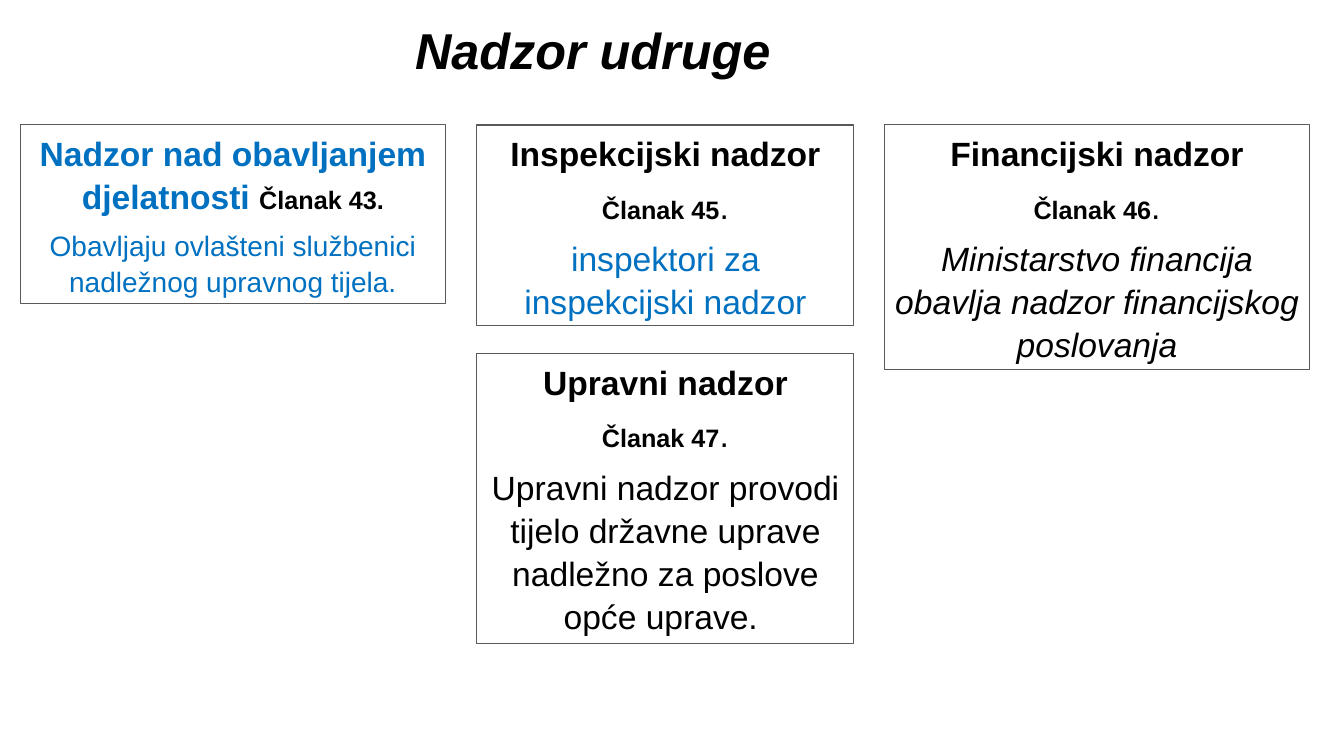
import pptx
import pptx.util
import pptx.dml.color
import pptx.enum.shapes
import pptx.enum.text

Inches = pptx.util.Inches
Pt = pptx.util.Pt
BLACK, BLUE, GREY = "000000", "0070C0", "595959"


def color(code):
    return pptx.dml.color.RGBColor.from_string(code)


def style(item, values):
    for key, value in values.items():
        setattr(item, key, value)


def run(text, size=24, tint=BLACK, **extra):
    return text, tint, {"name": "Arial", "size": Pt(size), "bold": False, "italic": False, **extra}


def write(frame, paras):
    style(frame, {
        "word_wrap": True,
        "auto_size": pptx.enum.text.MSO_AUTO_SIZE.NONE,
        "vertical_anchor": pptx.enum.text.MSO_ANCHOR.TOP,
        "margin_left": Inches(0.1),
        "margin_right": Inches(0.1),
        "margin_top": Inches(0.05),
        "margin_bottom": Inches(0.05),
    })
    for index, runs in enumerate(paras):
        para = frame.add_paragraph() if index else frame.paragraphs[0]
        style(para, {
            "alignment": pptx.enum.text.PP_ALIGN.CENTER,
            "line_spacing": 1.07,
            "space_before": Pt(0),
            "space_after": Pt(6.8),
        })
        for text, tint, values in runs:
            part = para.add_run()
            part.text = text
            style(part.font, values)
            part.font.color.rgb = color(tint)


def title(slide, box, text):
    head = slide.shapes.title
    style(head, dict(zip(("left", "top", "width", "height"), map(Inches, box))))
    write(head.text_frame, [[run(text, 36, bold=True, italic=True)]])


def card(slide, box, paras):
    shape = slide.shapes.add_shape(
        pptx.enum.shapes.MSO_SHAPE.RECTANGLE, *map(Inches, box))
    shape.shadow.inherit = False
    shape.fill.background()
    shape.line.color.rgb = color(GREY)
    shape.line.width = Pt(0.75)
    write(shape.text_frame, paras)


def topic(name, number, body):
    return [
        [run(name, bold=True)],
        [run(f"Članak {number}", 18, bold=True), run(".")],
        [body],
    ]


def main():
    deck = pptx.Presentation()
    style(deck, {"slide_width": Inches(13.33), "slide_height": Inches(7.5)})
    slide = deck.slides.add_slide(deck.slide_layouts[5])
    title(slide, (3.77, 0.1, 4.22, 0.72), "Nadzor udruge")

    top, side, mid = 1.24, 4.22, 3.74
    card(slide, (0.2, top, side, 1.77), [
        [run("Nadzor nad obavljanjem djelatnosti ", tint=BLUE, bold=True),
         run("Članak 43.", 18, bold=True)],
        [run("Obavljaju ovlašteni službenici nadležnog upravnog tijela.", 20, BLUE)],
    ])
    card(slide, (4.73, top, mid, 1.99), topic(
        "Inspekcijski nadzor", 45,
        run("inspektori za inspekcijski nadzor", tint=BLUE)))
    card(slide, (8.77, top, side, 2.43), topic(
        "Financijski nadzor", 46,
        run("Ministarstvo financija obavlja nadzor financijskog poslovanja", italic=True)))
    card(slide, (4.73, 3.51, mid, 2.87), topic(
        "Upravni nadzor", 47,
        run("Upravni nadzor provodi tijelo državne uprave nadležno za poslove opće uprave. ")))
    deck.save("out.pptx")


if __name__ == "__main__":
    main()
